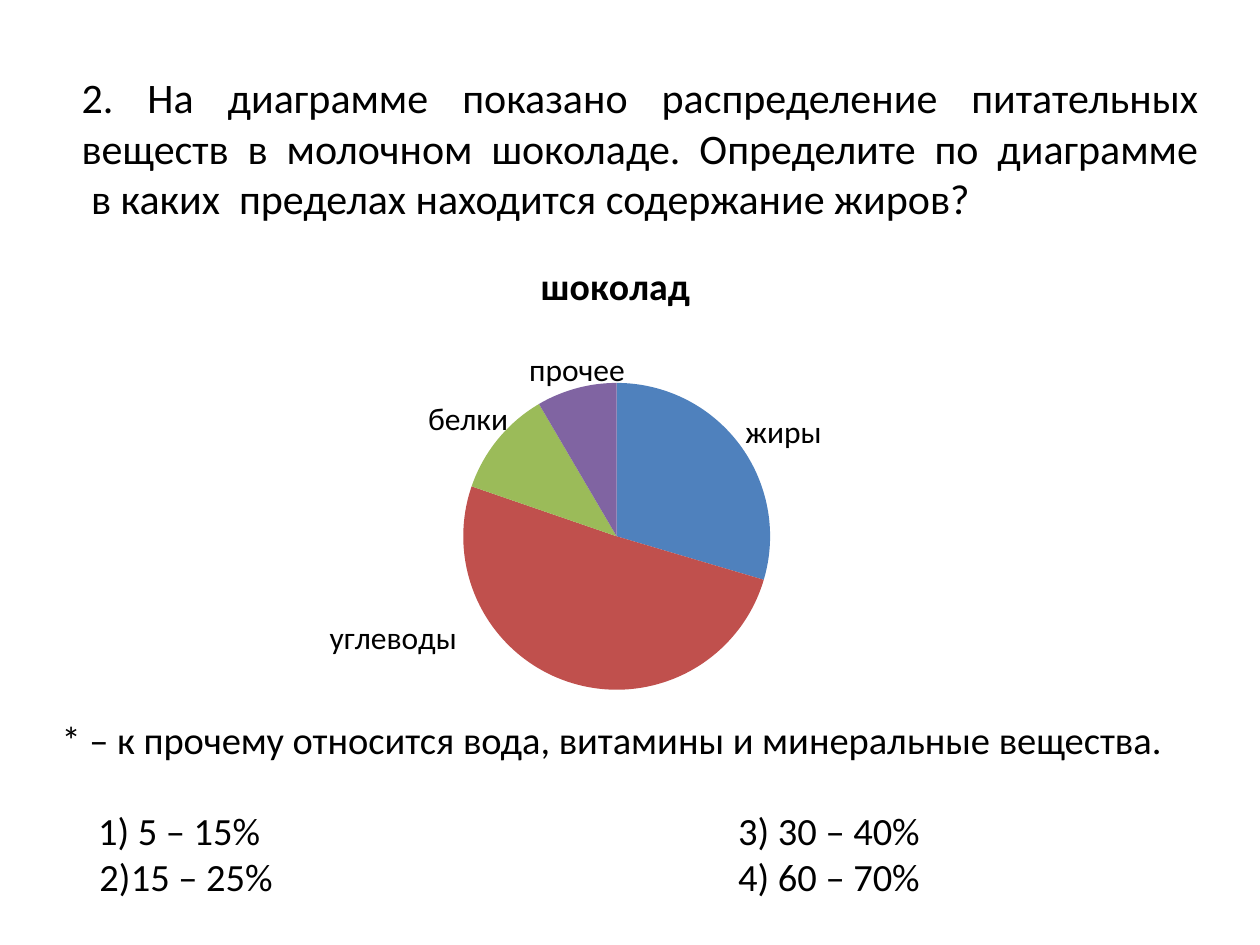
import pptx
import pptx.chart.data
import pptx.dml.color
import pptx.enum.chart
import pptx.enum.text
import pptx.oxml
import pptx.oxml.ns
import pptx.util
from dataclasses import dataclass

Inches = pptx.util.Inches
Pt = pptx.util.Pt
Align = pptx.enum.text.PP_ALIGN
Anchor = pptx.enum.text.MSO_ANCHOR
Spot = pptx.enum.chart.XL_LABEL_POSITION
FACE = "Calibri"
INK = "000000"


@dataclass
class Box:
    left: float
    top: float
    width: float
    height: float

    def frame(self) -> list:
        return [Inches(v) for v in (self.left, self.top, self.width, self.height)]


@dataclass
class Slice:
    name: str
    value: float
    color: str
    shift: tuple


@dataclass
class Choice:
    near: str
    far: str
    margin: float
    indent: float
    before: float


SLICES = [
    Slice("жиры", 4.2, "4F81BD", (0, 0.022)),
    Slice("углеводы", 7.2, "C0504D", (-0.09, -0.137)),
    Slice("белки", 1.6, "9BBB59", (0.013, 0.008)),
    Slice("прочее", 1.2, "8064A2", (0.041, 0.016)),
]
CHOICES = [
    Choice(" 5 – 15%", "3) 30 – 40%", 0.49, -0.2, 26),
    Choice("15 – 25%", "4) 60 – 70%", 0.55, -0.25, 0),
]


def tint(hue: str):
    return pptx.dml.color.RGBColor.from_string(hue)


def apply(item, style: dict) -> None:
    for key, value in style.items():
        setattr(item, key, value)


def ink(font, size: float, bold: bool = False) -> None:
    apply(font, {"name": FACE, "size": Pt(size), "bold": bold})
    font.color.rgb = tint(INK)


def node(tag: str, parent, **attrs):
    item = pptx.oxml.ns.qn(tag)
    child = parent.makeelement(item, attrs)
    parent.append(child)
    return child


def layout(**parts):
    item = pptx.oxml.parse_xml(f'<c:layout {pptx.oxml.ns.nsdecls("c")}/>')
    manual = node("c:manualLayout", item)
    for tag, value in parts.items():
        node(f"c:{tag}", manual, val=str(value))
    return item


def write(slide, box: Box, anchor):
    frame = slide.shapes.add_textbox(*box.frame()).text_frame
    apply(frame, {"word_wrap": True, "vertical_anchor": anchor})
    return frame


def fill(para, text: str, size: float) -> None:
    para.text = text
    for run in para.runs:
        ink(run.font, size)


def choose(frame, choice: Choice) -> None:
    para = frame.add_paragraph()
    fill(para, f"{choice.near}\t{choice.far}", 22)
    para.space_before = Pt(choice.before)
    props = para._p.get_or_add_pPr()
    props.set("marL", str(Inches(choice.margin)))
    props.set("indent", str(Inches(choice.indent)))
    node("a:buFont", props, typeface="+mj-lt")
    node("a:buAutoNum", props, type="arabicParenR")
    tabs = node("a:tabLst", props)
    node("a:tab", tabs, pos=str(Inches(5.37)), algn="l")


def mark(point, part: Slice) -> None:
    point.format.fill.solid()
    point.format.fill.fore_color.rgb = tint(part.color)
    label = point.data_label
    label.text_frame.text = part.name
    ink(label.text_frame.paragraphs[0].runs[0].font, 18)
    label.position = Spot.OUTSIDE_END
    x, y = part.shift
    label._dLbl.insert(1, layout(x=x, y=y))


def draw(slide, box: Box, parts: list[Slice]) -> None:
    data = pptx.chart.data.CategoryChartData()
    data.categories = [str(n) for n in range(1, len(parts) + 1)]
    data.add_series("Series 1", [part.value for part in parts])
    kind = pptx.enum.chart.XL_CHART_TYPE.PIE
    chart = slide.shapes.add_chart(kind, *box.frame(), data).chart
    apply(chart, {"has_legend": False, "has_title": True})
    ink(chart.font, 18)
    title = chart.chart_title.text_frame
    title.text = "шоколад"
    ink(title.paragraphs[0].runs[0].font, 21.6, True)
    plot = chart.plots[0]
    plot.vary_by_categories = True
    series = plot.series[0]
    labels = series.data_labels
    apply(labels, {"show_value": True, "position": Spot.OUTSIDE_END})
    ink(labels.font, 18)
    for index, part in enumerate(parts):
        mark(series.points[index], part)
    root = labels._element
    for old in root.findall(pptx.oxml.ns.qn("c:showLeaderLines")):
        root.remove(old)
    node("c:showLeaderLines", root, val="0")
    area = chart._chartSpace.chart.plotArea
    for old in area.findall(pptx.oxml.ns.qn("c:layout")):
        area.remove(old)
    area.insert(0, layout(layoutTarget="inner", xMode="edge", yMode="edge",
                          x=0.376, y=0.288, w=0.25, h=0.6))


def main() -> None:
    deck = pptx.Presentation()
    apply(deck, {"slide_width": Inches(10), "slide_height": Inches(7.5)})
    slide = deck.slides.add_slide(deck.slide_layouts[6])
    head = write(slide, Box(0.55, 0.31, 9.06, 1.72), Anchor.MIDDLE).paragraphs[0]
    fill(head, "2. На диаграмме показано распределение питательных веществ "
               "в молочном шоколаде. Определите по диаграмме\v "
               "в каких  пределах находится содержание жиров?", 24)
    head.alignment = Align.JUSTIFY
    draw(slide, Box(0, 1.87, 9.77, 4.06), SLICES)
    notes = write(slide, Box(0.39, 5.63, 9.3, 1.8), Anchor.TOP)
    fill(notes.paragraphs[0],
         "* – к прочему относится вода, витамины и минеральные вещества.", 22)
    for choice in CHOICES:
        choose(notes, choice)
    deck.save("out.pptx")


if __name__ == "__main__":
    main()
